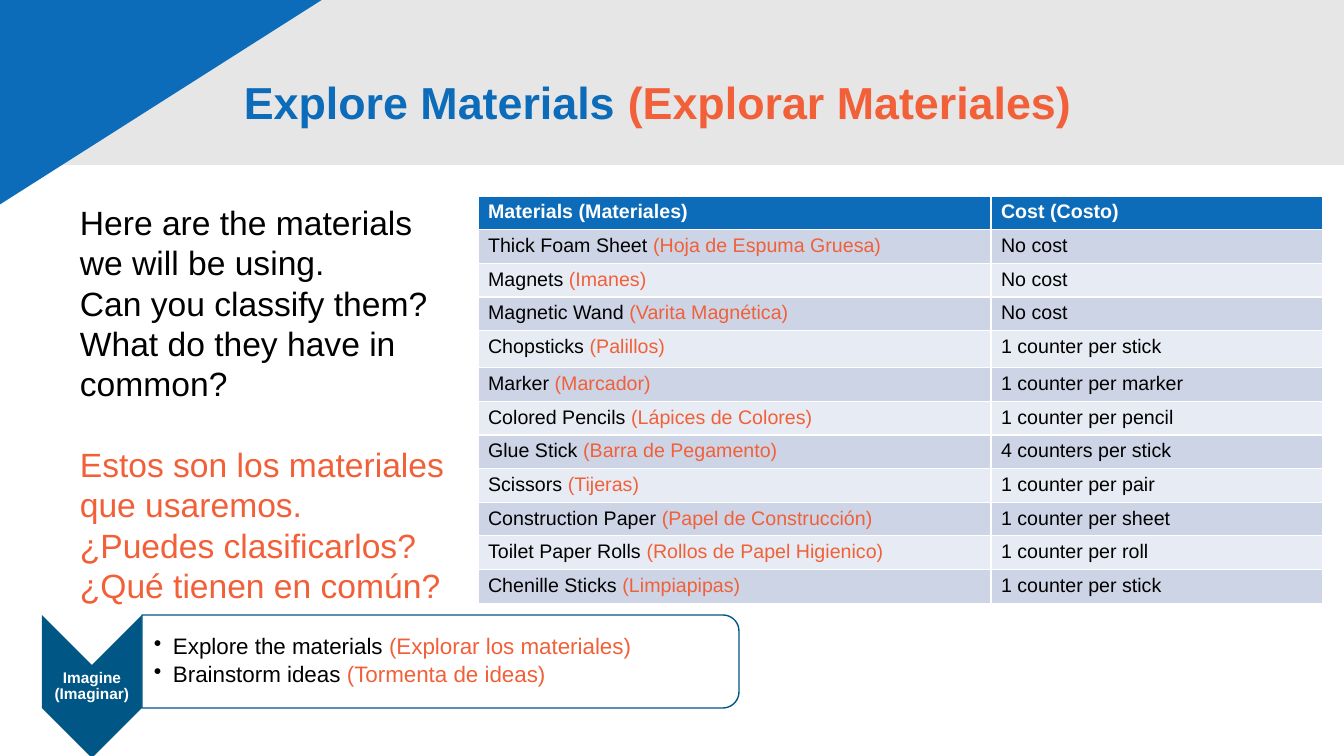
import math

from lxml import etree
from pptx import Presentation
from pptx.dml.color import RGBColor
from pptx.enum import shapes, text
from pptx.oxml.ns import qn
from pptx.util import Emu, Pt

BLUE, ORANGE, NAVY = "0D6CB9", "F16038", "005786"
BLACK, WHITE, GREY = "000000", "FFFFFF", "E7E6E6"
BANDS = ["CCD4E6", "E7EBF3"]

TITLE = ("Explore Materials ", "(Explorar Materiales)")
ENGLISH = ["Here are the materials we will be using.",
           "Can you classify them?",
           "What do they have in common?"]
SPANISH = ["Estos son los materiales que usaremos.",
           "¿Puedes clasificarlos?",
           "¿Qué tienen en común?"]
HEADINGS = ["Materials (Materiales)", "Cost (Costo)"]
MATERIALS = [
    ("Thick Foam Sheet ", "(Hoja de Espuma Gruesa)", "No cost"),
    ("Magnets ", "(Imanes)", "No cost"),
    ("Magnetic Wand ", "(Varita Magnética)", "No cost"),
    ("Chopsticks ", "(Palillos)", "1 counter per stick"),
    ("Marker ", "(Marcador)", "1 counter per marker"),
    ("Colored Pencils ", "(Lápices de Colores)", "1 counter per pencil"),
    ("Glue Stick ", "(Barra de Pegamento)", "4 counters per stick"),
    ("Scissors ", "(Tijeras)", "1 counter per pair"),
    ("Construction Paper ", "(Papel de Construcción)", "1 counter per sheet"),
    ("Toilet Paper Rolls ", "(Rollos de Papel Higienico)", "1 counter per roll"),
    ("Chenille Sticks ", "(Limpiapipas)", "1 counter per stick"),
]
STAGE = "Imagine (Imaginar)"
STEPS = [("Explore the materials ", "(Explorar los materiales)"),
         ("Brainstorm ideas ", "(Tormenta de ideas)")]

TABLE_BOX = (478, 196, 845, 403)
COLUMNS = [513, 332]
TALL_ROW, TALL_HEIGHT = 4, 37
STEP_LEFT, STEP_TOP, STEP_RIGHT, STEP_BOTTOM = 142, 615, 739, 708
STAGE_LEFT, NOTCH, CORNER = 42, 50, 16


def px(length):
    return Emu(round(length * 914400 / 100.8))


def rgb(value):
    return RGBColor.from_string(value)


def paint(shape, fill, line=None):
    shape.shadow.inherit = False
    shape.fill.solid()
    shape.fill.fore_color.rgb = rgb(fill)
    if line:
        shape.line.color.rgb = rgb(line)
        shape.line.width = Pt(1)
    else:
        shape.line.fill.background()


def write(frame, paragraphs, size, bold=False, align=None, spacing=None,
          after=0, bullet_indent=0, anchor=None, insets=None):
    """Fill a frame; each paragraph is a list of (text, colour) runs."""
    frame.word_wrap = True
    if anchor is not None:
        frame.vertical_anchor = anchor
    if insets:
        (frame.margin_left, frame.margin_top,
         frame.margin_right, frame.margin_bottom) = map(px, insets)
    for index, runs in enumerate(paragraphs):
        paragraph = frame.add_paragraph() if index else frame.paragraphs[0]
        if bullet_indent:
            props = paragraph._p.get_or_add_pPr()
            props.set("marL", str(px(bullet_indent)))
            props.set("indent", str(-px(bullet_indent)))
            etree.SubElement(props, qn("a:buChar")).set("char", "•")
        paragraph.alignment = align or text.PP_ALIGN.LEFT
        paragraph.line_spacing = spacing
        paragraph.space_after = Pt(after)
        for words, colour in runs:
            run = paragraph.add_run()
            run.text = words
            run.font.name, run.font.size, run.font.bold = "Arial", Pt(size), bold
            run.font.color.rgb = rgb(colour)


def bilingual(pair, first=BLACK):
    return list(zip(pair, (first, ORANGE)))


def outline(points):
    builder = slide.shapes.build_freeform(*map(px, points[0]))
    builder.add_line_segments([tuple(map(px, p)) for p in points[1:]])
    return builder.convert_to_shape()


def text_box(*box):
    return slide.shapes.add_textbox(*map(px, box)).text_frame


deck = Presentation()
deck.slide_width, deck.slide_height = px(1344), px(756)
slide = deck.slides.add_slide(deck.slide_layouts[6])

# Header
banner = slide.shapes.add_shape(shapes.MSO_SHAPE.RECTANGLE,
                                *map(px, (-26, -19, 1370, 184)))
paint(banner, GREY)
corner = slide.shapes.add_shape(shapes.MSO_SHAPE.RIGHT_TRIANGLE,
                                *map(px, (-259, -173, 853, 542)))
corner.rotation = 180
corner._element.spPr.find(qn("a:xfrm")).set("flipH", "1")
paint(corner, BLUE)
write(text_box(234, 32, 978, 146), [bilingual(TITLE, BLUE)], 32, bold=True,
      spacing=0.9, anchor=text.MSO_ANCHOR.MIDDLE)

# Stage arrow and its steps
middle = (STAGE_LEFT + STEP_LEFT) / 2
stage = outline([(STEP_LEFT, STEP_TOP), (STEP_LEFT, STEP_BOTTOM),
                 (middle, STEP_BOTTOM + NOTCH), (STAGE_LEFT, STEP_BOTTOM),
                 (STAGE_LEFT, STEP_TOP), (middle, STEP_TOP + NOTCH)])
paint(stage, NAVY)
write(stage.text_frame, [[(STAGE, WHITE)]], 11, bold=True, spacing=0.9, after=4,
      align=text.PP_ALIGN.CENTER, anchor=text.MSO_ANCHOR.MIDDLE,
      insets=(1, 47, 1, 47))


def rounded(centre_y, start):
    """Points of a quarter circle at the right edge, clockwise from start degrees."""
    angles = [math.radians(start + 10 * step) for step in range(10)]
    return [(STEP_RIGHT - CORNER + CORNER * math.cos(a),
             centre_y + CORNER * math.sin(a)) for a in angles]


steps = outline([(STEP_LEFT, STEP_TOP), *rounded(STEP_TOP + CORNER, -90),
                 *rounded(STEP_BOTTOM - CORNER, 0), (STEP_LEFT, STEP_BOTTOM)])
paint(steps, WHITE, NAVY)
write(steps.text_frame, [bilingual(step) for step in STEPS], 16, spacing=0.9,
      after=3, bullet_indent=19, anchor=text.MSO_ANCHOR.MIDDLE,
      insets=(12, 5, 5, 5))

# Questions
questions = text_box(70, 197, 404, 448)
write(questions, [[(line, BLACK)] for line in ENGLISH]
      + [[(line, ORANGE)] for line in SPANISH], 24, spacing=Pt(28.8))
questions.paragraphs[len(ENGLISH)].space_before = Pt(28.8)

# Price table
table = slide.shapes.add_table(len(MATERIALS) + 1, len(COLUMNS),
                               *map(px, TABLE_BOX)).table
for column, width in zip(table.columns, COLUMNS):
    column.width = px(width)
row_height = (TABLE_BOX[3] - TALL_HEIGHT) / len(MATERIALS)
rows = [[[(heading, WHITE)] for heading in HEADINGS]]
rows += [[bilingual(names), [(cost, BLACK)]] for *names, cost in MATERIALS]
for r, row in enumerate(rows):
    table.rows[r].height = px(TALL_HEIGHT if r == TALL_ROW else row_height)
    for c, runs in enumerate(row):
        cell = table.cell(r, c)
        cell.fill.solid()
        cell.fill.fore_color.rgb = rgb(BANDS[(r - 1) % 2] if r else BLUE)
        write(cell.text_frame, [runs], 14, bold=r == 0)

deck.save("out.pptx")
